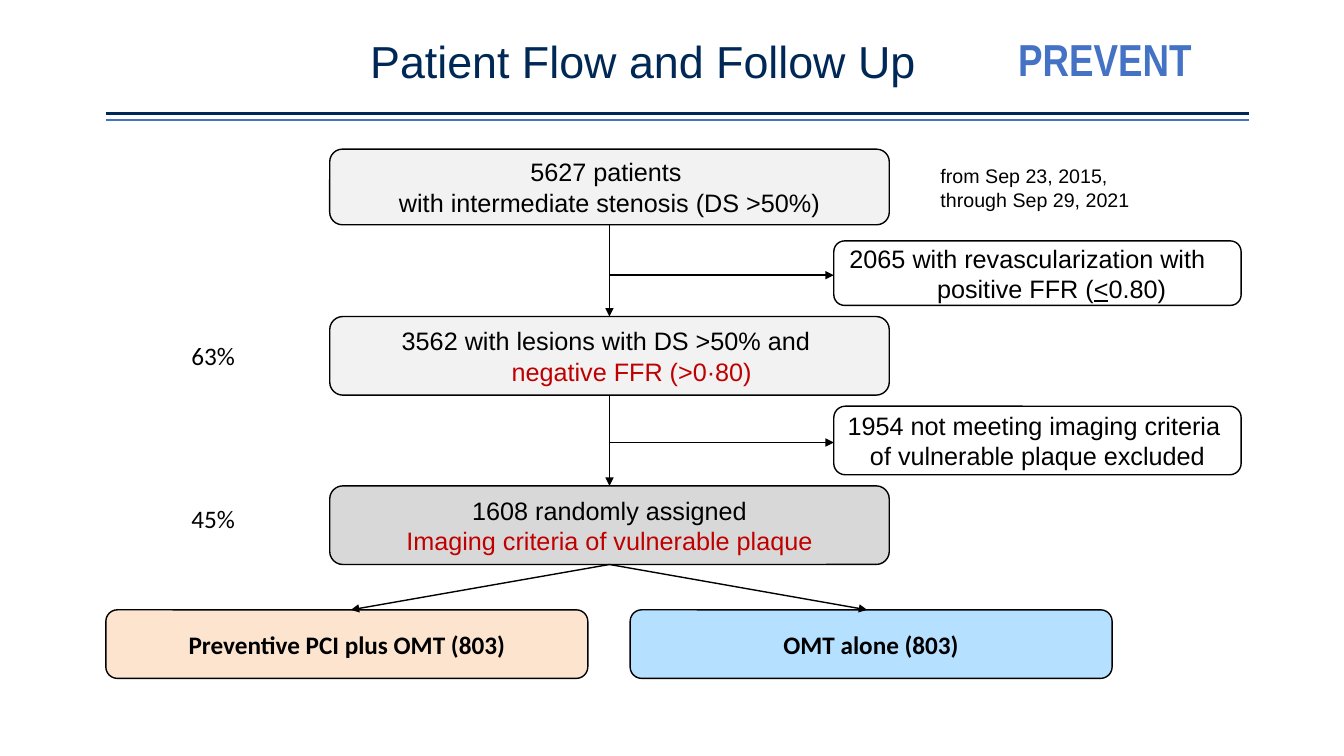
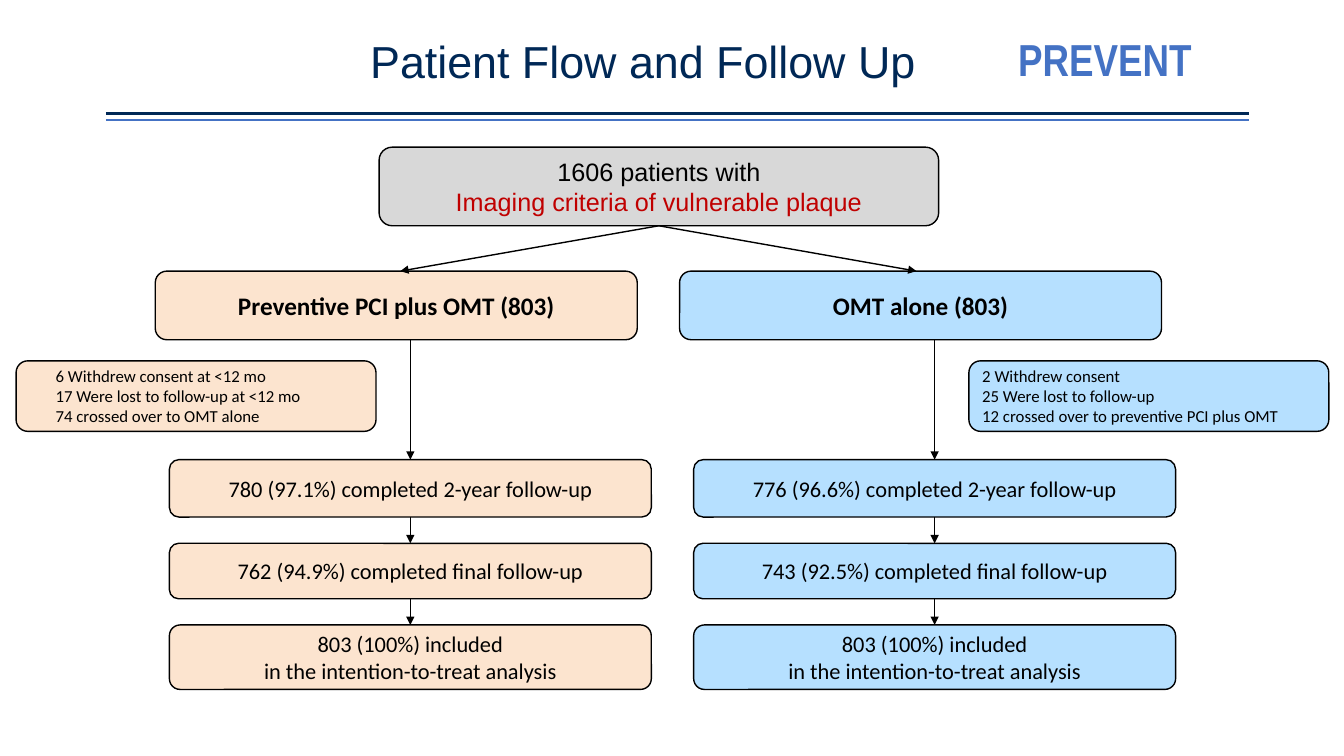
from lxml.etree import SubElement
from pptx import Presentation
from pptx.dml.color import RGBColor
from pptx.enum.shapes import MSO_CONNECTOR, MSO_SHAPE
from pptx.enum.text import MSO_ANCHOR, MSO_AUTO_SIZE, PP_ALIGN
from pptx.oxml.ns import qn
from pptx.util import Inches, Pt

COLORS = {
    "navy": "002856", "blue": "4472C4", "black": "000000", "red": "C00000",
    "light": "F2F2F2", "gray": "D8D8D8", "peach": "FCE4CF", "sky": "B6E0FF",
}
ARIAL = {"name": "Arial", "size": Pt(18)}
CALIBRI = {"name": "Calibri", "size": Pt(18)}
STEP = {"name": "Calibri", "size": Pt(16)}
DETAIL = {"name": "Calibri", "size": Pt(12)}
ARM_TITLES = (("Preventive PCI plus OMT (803)", "peach"), ("OMT alone (803)", "sky"))
ARM_WIDTH, ARM_HEIGHT, ARM_PITCH = 4.78, 0.68, 5.2
STAGE_WIDTH, STAGE_HEIGHT, STAGE_LEFT = 5.55, 0.78, 3.27


def rgb(color):
    """Return the named colour."""
    return RGBColor.from_string(COLORS[color])


def line(text, color="black", left=0, right=0, underlined=""):
    """Describe one paragraph, its side margins and its underlined character."""
    return {"text": text, "color": color, "underlined": underlined,
            "margins": {"marL": left, "marR": right}}


def write(shape, lines, style, align=PP_ALIGN.CENTER, anchor=MSO_ANCHOR.MIDDLE, spacing=1.0):
    """Fill a shape with formatted paragraphs."""
    frame = shape.text_frame
    frame.word_wrap = True
    frame.auto_size = MSO_AUTO_SIZE.NONE
    frame.vertical_anchor = anchor
    for index, content in enumerate(lines):
        paragraph = frame.paragraphs[0] if index == 0 else frame.add_paragraph()
        paragraph.alignment = align
        paragraph.line_spacing = spacing
        properties = paragraph._p.get_or_add_pPr()
        for side, length in content["margins"].items():
            properties.set(side, str(Inches(length)))
        mark = content["underlined"]
        pieces = content["text"].partition(mark) if mark else [content["text"]]
        for piece in pieces:
            run = paragraph.add_run()
            run.text = piece
            run.font.color.rgb = rgb(content["color"])
            for name, value in style.items():
                setattr(run.font, name, value)
            if mark and piece == mark:
                run.font.underline = True


def add_label(slide, left, top, width, height, lines, style):
    """Add a plain text box."""
    shape = slide.shapes.add_textbox(*map(Inches, (left, top, width, height)))
    write(shape, lines, style, PP_ALIGN.LEFT, MSO_ANCHOR.TOP)


def add_box(slide, left, top, width, height, lines, style, fill=None, align=PP_ALIGN.CENTER):
    """Add an outlined rounded box with text."""
    shape = slide.shapes.add_shape(
        MSO_SHAPE.ROUNDED_RECTANGLE, *map(Inches, (left, top, width, height)))
    shape.shadow.inherit = False
    if fill:
        shape.fill.solid()
        shape.fill.fore_color.rgb = rgb(fill)
    else:
        shape.fill.background()
    shape.line.color.rgb = rgb("black")
    shape.line.width = Pt(1)
    write(shape, lines, style, align)


def add_line(slide, start, end, color="black", width=1, arrow=True):
    """Add a straight line, with an arrowhead at its end if wanted."""
    connector = slide.shapes.add_connector(
        MSO_CONNECTOR.STRAIGHT, *map(Inches, (*start, *end)))
    connector.line.color.rgb = rgb(color)
    connector.line.width = Pt(width)
    if arrow:
        SubElement(connector.line._get_or_add_ln(), qn("a:tailEnd"), type="triangle")
    SubElement(connector._element.spPr, qn("a:effectLst"))


def add_flow_slide(presentation):
    """Add a slide with the shared title, trial name and double rule."""
    slide = presentation.slides.add_slide(presentation.slide_layouts[5])
    title = slide.shapes.title
    bounds = {"left": 0.63, "top": 0.34, "width": 11.5, "height": 0.79}
    for name, value in bounds.items():
        setattr(title, name, Inches(value))
    write(title, [line("Patient Flow and Follow Up", "navy")],
          {"name": "Arial", "size": Pt(32)}, anchor=MSO_ANCHOR.TOP, spacing=0.9)
    add_label(slide, 10, 0.27, 2.57, 0.64, [line("PREVENT", "blue")],
              {"name": "Arial Narrow", "size": Pt(32), "bold": True})
    for top, color, width in ((1.13, "navy", 2.25), (1.19, "blue", 1)):
        add_line(slide, (1.05, top), (12.39, top), color, width, arrow=False)
    return slide


def add_randomization(slide, left, top, first_line):
    """Add the randomized group and its two treatment arms."""
    lines = [line(first_line), line("Imaging criteria of vulnerable plaque", "red")]
    add_box(slide, left, top, STAGE_WIDTH, STAGE_HEIGHT, lines, ARIAL, "gray")
    arm_top = top + 1.23
    for index, (text, fill) in enumerate(ARM_TITLES):
        add_box(slide, left - 2.22 + index * ARM_PITCH, arm_top, ARM_WIDTH, ARM_HEIGHT,
                [line(text)], {**CALIBRI, "bold": True}, fill)
    for target in (0.21, 5.33):
        add_line(slide, (left + STAGE_WIDTH / 2, top + STAGE_HEIGHT), (left + target, arm_top))


def add_enrollment(presentation):
    """Build the slide from screening to random assignment."""
    slide = add_flow_slide(presentation)
    add_box(slide, STAGE_LEFT, 1.48, STAGE_WIDTH, 0.75,
            [line("5627 patients", right=0.07),
             line("with intermediate stenosis (DS >50%)")], ARIAL, "light")
    add_box(slide, STAGE_LEFT, 3.14, STAGE_WIDTH, STAGE_HEIGHT,
            [line("3562 with lesions with DS >50% and", right=0.07),
             line("negative FFR (>0·80)", "red", left=0.44)], ARIAL, "light")
    add_randomization(slide, STAGE_LEFT, 4.82, "1608 randomly assigned")
    add_label(slide, 9.23, 1.58, 3.27, 0.59,
              [line("from Sep 23, 2015,"), line("through Sep 29, 2021")],
              {"name": "Arial", "size": Pt(14)})
    exclusions = (
        (2.39, 0.64, 2.73, [line("2065 with revascularization with", right=0.2),
                            line("positive FFR (<0.80)", left=0.28, underlined="<")]),
        (4.03, 0.68, 4.39, [line("1954 not meeting imaging criteria", right=0.07),
                            line("of vulnerable plaque excluded")]),
    )
    center = STAGE_LEFT + STAGE_WIDTH / 2
    for top, height, branch, lines in exclusions:
        add_box(slide, 8.27, top, 4.04, height, lines, ARIAL)
        add_line(slide, (center, branch), (8.27, branch))
    for start, end in ((2.23, 3.14), (3.92, 4.82)):
        add_line(slide, (center, start), (center, end))
    for top, share in ((3.33, "63%"), (4.94, "45%")):
        add_label(slide, 1.8, top, 0.8, 0.4, [line(share)], CALIBRI)


def add_follow_up(presentation):
    """Build the slide from the treatment arms to the analysis."""
    slide = add_flow_slide(presentation)
    add_randomization(slide, 3.76, 1.46, "1606 patients with")
    rows = ((4.56, 0.57), (5.39, 0.55), (6.2, 0.64))
    analysis = ["803 (100%) included", "in the intention-to-treat analysis"]
    arms = (
        ("peach", 0.16, 0.26,
         ["6 Withdrew consent at <12 mo", "17 Were lost to follow-up at <12 mo",
          "74 crossed over to OMT alone"],
         "780 (97.1%) completed 2-year follow-up", "762 (94.9%) completed final follow-up"),
        ("sky", 9.61, 0,
         ["2 Withdrew consent", "25 Were lost to follow-up",
          "12 crossed over to preventive PCI plus OMT"],
         "776 (96.6%) completed 2-year follow-up", "743 (92.5%) completed final follow-up"),
    )
    for index, (fill, left, indent, losses, two_year, final) in enumerate(arms):
        shift = index * ARM_PITCH
        add_box(slide, left, 3.58, 3.57, 0.7, [line(text, left=indent) for text in losses],
                DETAIL, fill, PP_ALIGN.LEFT)
        previous_bottom = 3.37
        for (top, height), texts in zip(rows, ([two_year], [final], analysis)):
            add_box(slide, 1.68 + shift, top, ARM_WIDTH, height,
                    [line(text) for text in texts], STEP, fill)
            add_line(slide, (4.07 + shift, previous_bottom), (4.07 + shift, top))
            previous_bottom = top + height


def main():
    """Build and save the presentation."""
    presentation = Presentation()
    presentation.slide_width = Inches(13.33)
    presentation.slide_height = Inches(7.5)
    add_enrollment(presentation)
    add_follow_up(presentation)
    presentation.save("out.pptx")


if __name__ == "__main__":
    main()
